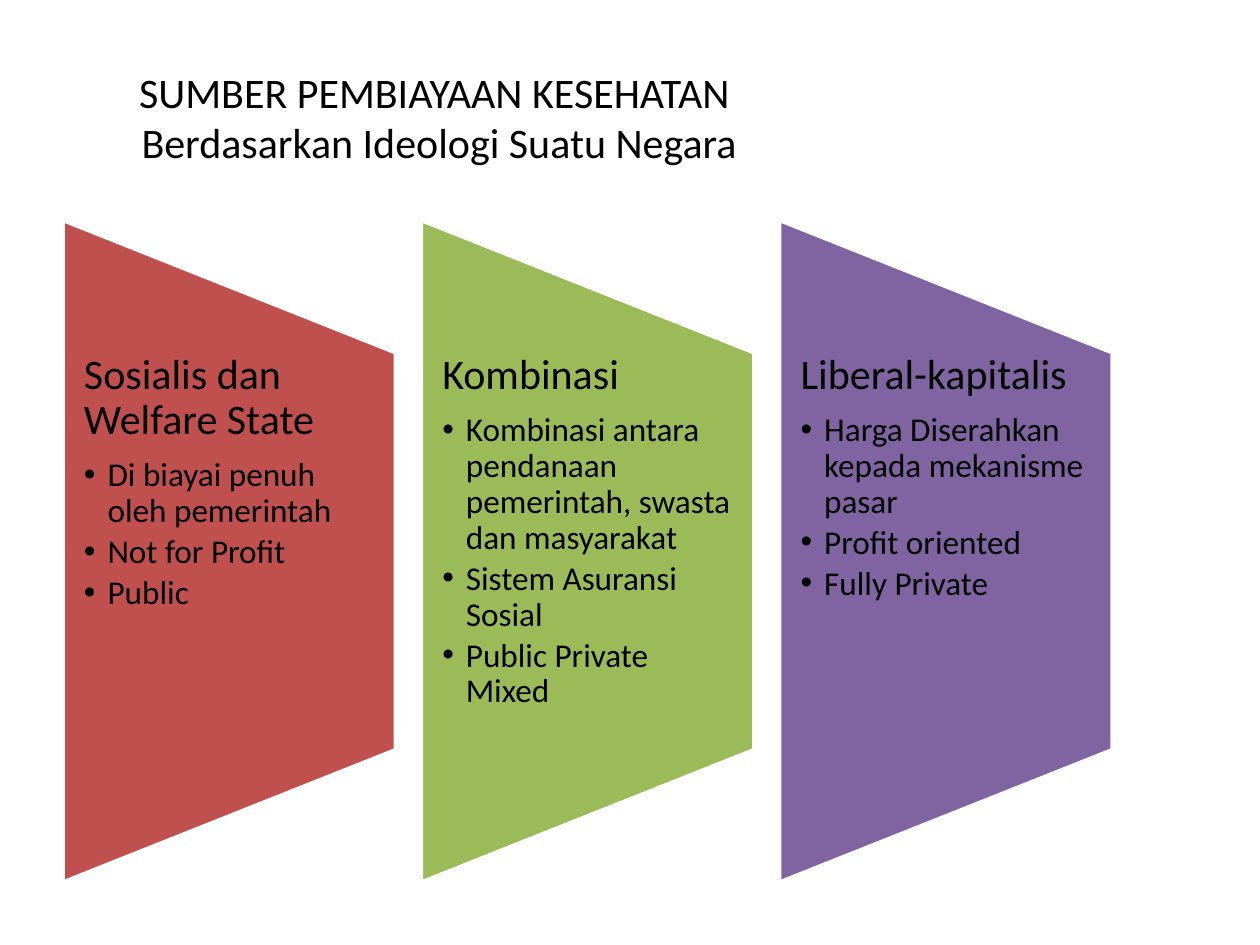
from pptx import Presentation
from pptx.dml.color import RGBColor
from pptx.enum.shapes import MSO_SHAPE
from pptx.enum.text import MSO_ANCHOR, PP_ALIGN
from pptx.oxml.ns import qn
from pptx.util import Pt
from lxml.etree import SubElement

TITLE = "SUMBER PEMBIAYAAN KESEHATAN \vBerdasarkan Ideologi Suatu Negara"
IDEOLOGIES = [
    ("Sosialis dan Welfare State", "C0504D",
     ["Di biayai penuh oleh pemerintah", "Not for Profit", "Public"]),
    ("Kombinasi", "9BBB59",
     ["Kombinasi antara pendanaan pemerintah, swasta dan masyarakat",
      "Sistem Asuransi Sosial", "Public Private Mixed"]),
    ("Liberal-kapitalis", "8064A2",
     ["Harga Diserahkan kepada mekanisme pasar", "Profit oriented", "Fully Private"]),
]

LEFT, TOP, WIDTH, HEIGHT, PITCH = 36, 126, 190, 378, 204.75
HEADING_SIZE, BULLET_SIZE, INDENT = 24, 19, 13.5


def color(hex_value):
    return RGBColor.from_string(hex_value)


def style_font(paragraph, size):
    paragraph.font.size = Pt(size)
    paragraph.font.name = "Calibri"
    paragraph.font.color.rgb = color("000000")


def add_bullet(paragraph):
    properties = paragraph._p.get_or_add_pPr()
    properties.set("marL", str(Pt(INDENT)))
    properties.set("indent", str(-Pt(INDENT)))
    SubElement(properties, qn("a:buFont")).set("typeface", "Arial")
    SubElement(properties, qn("a:buChar")).set("char", "•")


def add_panel(slide, left, fill):
    panel = slide.shapes.add_shape(
        MSO_SHAPE.FLOWCHART_MANUAL_OPERATION,
        Pt(left + (WIDTH - HEIGHT) / 2), Pt(TOP + (HEIGHT - WIDTH) / 2),
        Pt(HEIGHT), Pt(WIDTH))
    panel.rotation = 270
    panel.shadow.inherit = False
    panel.fill.solid()
    panel.fill.fore_color.rgb = color(fill)
    panel.line.color.rgb = color("FFFFFF")
    panel.line.width = Pt(2)


def add_panel_text(slide, left, heading, bullets):
    box = slide.shapes.add_textbox(
        Pt(left), Pt(TOP + HEIGHT / 5), Pt(WIDTH), Pt(HEIGHT * 3 / 5))
    frame = box.text_frame
    frame.word_wrap = True
    frame.margin_left = frame.margin_right = Pt(12)
    frame.margin_top = frame.margin_bottom = 0

    paragraph = frame.paragraphs[0]
    paragraph.text = heading
    paragraph.line_spacing = 0.9
    paragraph.space_after = Pt(HEADING_SIZE * 0.35)
    style_font(paragraph, HEADING_SIZE)

    for bullet in bullets:
        paragraph = frame.add_paragraph()
        paragraph.text = bullet
        paragraph.level = 1
        paragraph.line_spacing = 0.9
        paragraph.space_after = Pt(BULLET_SIZE * 0.15)
        add_bullet(paragraph)
        style_font(paragraph, BULLET_SIZE)


def main():
    presentation = Presentation()
    presentation.slide_width, presentation.slide_height = Pt(720), Pt(540)
    slide = presentation.slides.add_slide(presentation.slide_layouts[5])

    title = slide.shapes.title
    title.left, title.top, title.width, title.height = Pt(36), Pt(21.6), Pt(430), Pt(90)
    title.text_frame.text = TITLE
    title.text_frame.vertical_anchor = MSO_ANCHOR.MIDDLE
    paragraph = title.text_frame.paragraphs[0]
    paragraph.alignment = PP_ALIGN.CENTER
    style_font(paragraph, HEADING_SIZE)

    for index, (heading, fill, bullets) in enumerate(IDEOLOGIES):
        left = LEFT + index * PITCH
        add_panel(slide, left, fill)
        add_panel_text(slide, left, heading, bullets)

    presentation.save("out.pptx")


if __name__ == "__main__":
    main()
